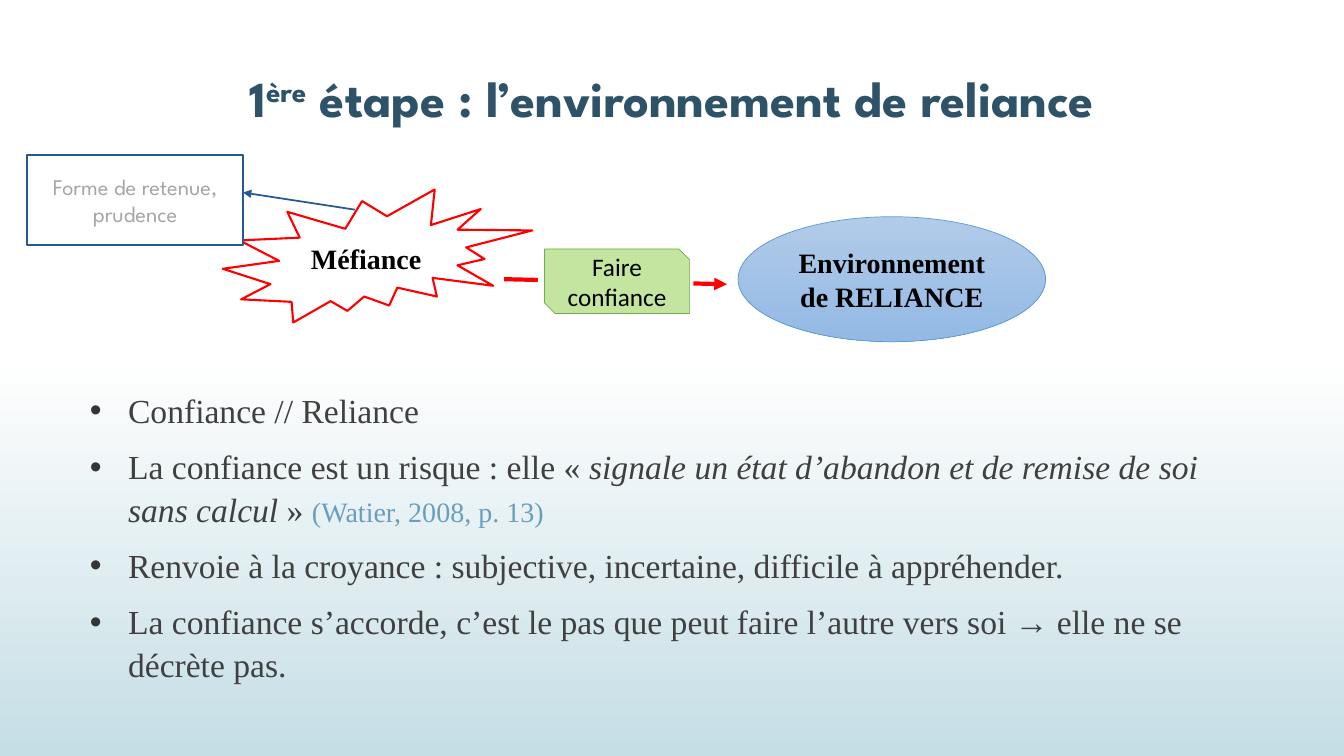
from lxml import etree
from pptx import Presentation
from pptx.dml.color import RGBColor
from pptx.enum.dml import MSO_LINE
from pptx.enum.shapes import MSO_CONNECTOR, MSO_SHAPE
from pptx.enum.text import MSO_ANCHOR, MSO_AUTO_SIZE, PP_ALIGN
from pptx.oxml.ns import qn
from pptx.util import Inches, Pt

STRAIGHT = MSO_CONNECTOR.STRAIGHT
BURST = MSO_SHAPE.EXPLOSION2
OVAL = MSO_SHAPE.OVAL
SNIP = MSO_SHAPE.SNIP_2_DIAG_RECTANGLE
RECT = MSO_SHAPE.RECTANGLE
DASH = MSO_LINE.LONG_DASH_DOT
TOP, MIDDLE = MSO_ANCHOR.TOP, MSO_ANCHOR.MIDDLE
CENTER, LEFT = PP_ALIGN.CENTER, PP_ALIGN.LEFT
NO_FIT = MSO_AUTO_SIZE.NONE

WHITE = RGBColor(0xFF, 0xFF, 0xFF)
BLACK = RGBColor(0, 0, 0)
RED = RGBColor(0xFF, 0, 0)
MIST = RGBColor(0xC5, 0xDE, 0xE5)
NAVY = RGBColor(0x2E, 0x53, 0x69)
BLUE = RGBColor(0x26, 0x59, 0x91)
SKY = RGBColor(0x5B, 0x9B, 0xD5)
PALE = RGBColor(0xB1, 0xCB, 0xE9)
AZURE = RGBColor(0x93, 0xB9, 0xE4)
LIME = RGBColor(0xC4, 0xE5, 0x9F)
GREEN = RGBColor(0x70, 0xAD, 0x47)
GREY = RGBColor(0xA6, 0xA6, 0xA6)
DARK = RGBColor(0x40, 0x40, 0x40)
STEEL = RGBColor(0x69, 0x9E, 0xBD)

SERIF, SANS, DISPLAY = "Times New Roman", "Calibri", "League Spartan"

POINTS = [
    [("Confiance // Reliance", {})],
    [
        ("La confiance est un risque : elle « ", {}),
        ("signale un état d’abandon et de remise de soi sans calcul",
         {"italic": True}),
        (" » ", {}),
        ("(Watier, 2008, p. 13)", {"size": 20, "color": STEEL}),
    ],
    [("Renvoie à la croyance : subjective, incertaine, difficile à "
      "appréhender.", {})],
    [("La confiance s’accorde, c’est le pas que peut faire l’autre vers soi "
      "→ elle ne se décrète pas.", {})],
]


def add_text(para, text, font=SERIF, size=20, color=BLACK, bold=False,
             italic=False, raised=False):
    run = para.add_run()
    run.text = text
    style = run.font
    style.name, style.size = font, Pt(size)
    style.bold, style.italic = bold, italic
    style.color.rgb = color
    if raised:
        run._r.get_or_add_rPr().set("baseline", "30000")


def blend(fill, first, last, start=0):
    """Fill from top to bottom; the first colour holds until start."""
    fill.gradient()
    fill.gradient_angle = 270
    for stop, color, place in zip(fill.gradient_stops, (first, last),
                                  (start, 1)):
        stop.color.rgb = color
        stop.position = place


def place(shape, left, top, width, height):
    shape.left, shape.top = Inches(left), Inches(top)
    shape.width, shape.height = Inches(width), Inches(height)
    frame = shape.text_frame
    frame.word_wrap = True
    frame.auto_size = NO_FIT
    frame.vertical_anchor = TOP
    return frame


def add_box(slide, kind, box, fill, edge, weight, text, **style):
    shape = slide.shapes.add_shape(kind, *map(Inches, box))
    shape.shadow.inherit = False
    if isinstance(fill, list):
        blend(shape.fill, *fill)
    else:
        shape.fill.solid()
        shape.fill.fore_color.rgb = fill
    shape.line.color.rgb = edge
    shape.line.width = Pt(weight)
    frame = shape.text_frame
    frame.word_wrap = True
    frame.vertical_anchor = MIDDLE
    para = frame.paragraphs[0]
    para.alignment = CENTER
    add_text(para, text, **style)


def add_arrow(slide, start, end, color, weight, dash=None):
    arrow = slide.shapes.add_connector(
        STRAIGHT, *map(Inches, (*start, *end)))
    arrow.line.color.rgb = color
    arrow.line.width = Pt(weight)
    if dash:
        arrow.line.dash_style = dash
    etree.SubElement(arrow.line._get_or_add_ln(), qn("a:tailEnd"),
                     type="triangle")
    etree.SubElement(arrow._element.spPr, qn("a:effectLst"))


def add_bullet(para):
    props = para._p.get_or_add_pPr()
    props.set("marL", str(Inches(0.38)))
    props.set("indent", str(Inches(-0.38)))
    tint = etree.SubElement(props, qn("a:buClr"))
    etree.SubElement(tint, qn("a:srgbClr"), val="353535")
    etree.SubElement(props, qn("a:buFont"), typeface="Arial")
    etree.SubElement(props, qn("a:buChar"), char="•")


def fill_title(slide):
    frame = place(slide.shapes.title, 0.58, 0.62, 12.17, 0.71)
    para = frame.paragraphs[0]
    para.alignment = CENTER
    style = {"font": DISPLAY, "size": 36, "color": NAVY, "bold": True}
    add_text(para, "1", **style)
    add_text(para, "ère", raised=True, **style)
    add_text(para, " étape : l’environnement de reliance", **style)


def fill_body(slide):
    frame = place(slide.placeholders[1], 0.79, 3.8, 11.76, 3.14)
    for index, parts in enumerate(POINTS):
        para = frame.add_paragraph() if index else frame.paragraphs[0]
        para.alignment = LEFT
        para.line_spacing = 1.05
        para.space_before = Pt(10)
        add_bullet(para)
        for text, style in parts:
            add_text(para, text, **{"size": 24, "color": DARK, **style})


def draw_path(slide):
    """Draw the way from mistrust to reliance."""
    add_box(slide, BURST, (2.21, 1.88, 3.07, 1.32), WHITE, RED, 1.5,
            "Méfiance", bold=True)
    add_arrow(slide, (5, 2.77), (7.21, 2.82), RED, 3, DASH)
    add_box(slide, OVAL, (7.32, 2.15, 3.05, 1.24), [PALE, AZURE], SKY, 0.5,
            "Environnement de RELIANCE", bold=True)
    add_box(slide, SNIP, (5.4, 2.47, 1.44, 0.64), LIME, GREEN, 0.5,
            "Faire confiance", font=SANS, size=18)
    add_box(slide, RECT, (0.27, 1.54, 2.14, 0.89), WHITE, BLUE, 1.25,
            "Forme de retenue, prudence", font=DISPLAY, size=16, color=GREY)
    add_arrow(slide, (3.52, 2.08), (2.41, 1.91), BLUE, 1.25)


def main():
    deck = Presentation()
    deck.slide_width, deck.slide_height = Inches(13.33), Inches(7.5)
    slide = deck.slides.add_slide(deck.slide_layouts[1])
    blend(slide.background.fill, WHITE, MIST, start=0.47)
    fill_title(slide)
    fill_body(slide)
    draw_path(slide)
    deck.save("out.pptx")


if __name__ == "__main__":
    main()
